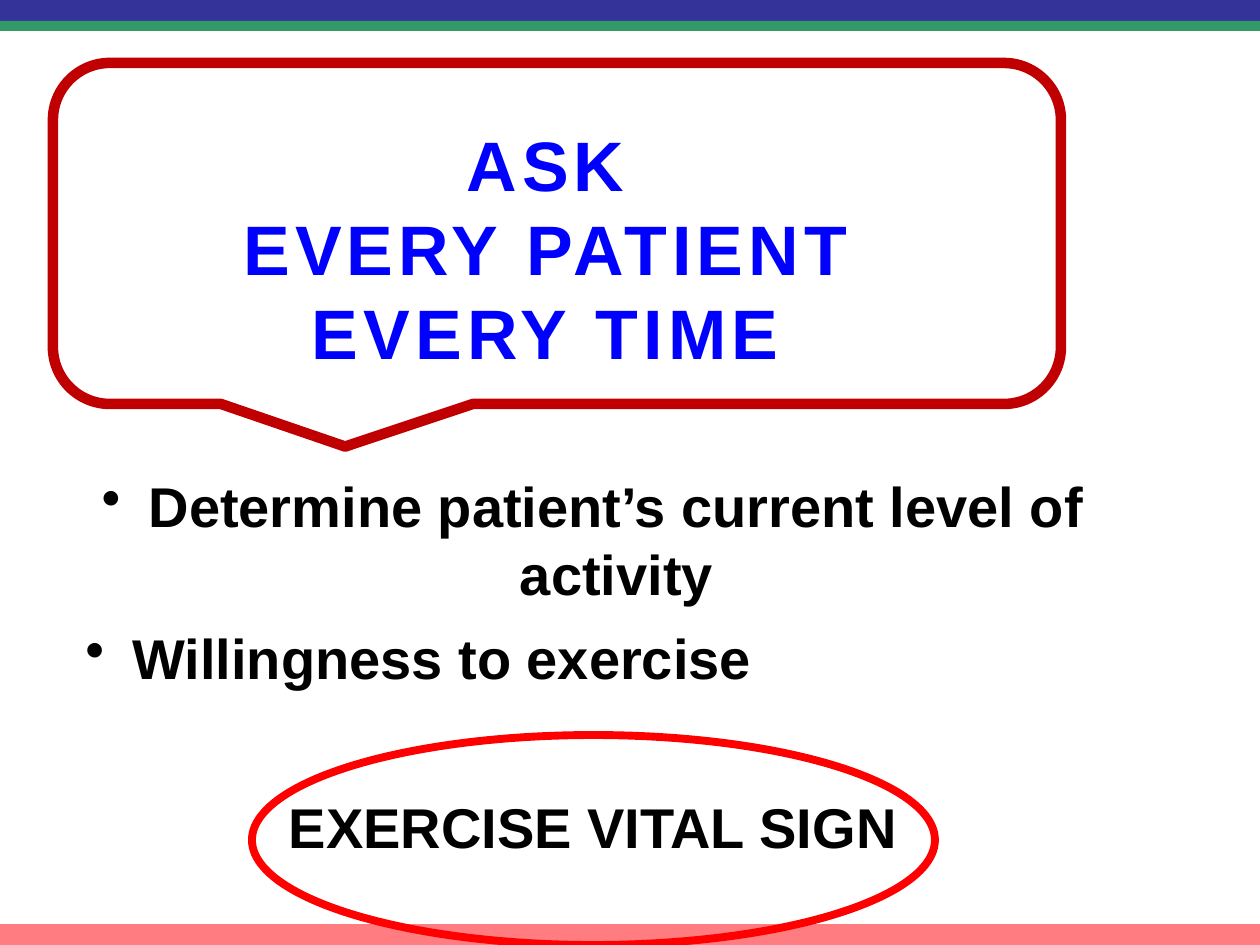
from pptx import Presentation
from pptx.dml.color import RGBColor
from pptx.enum.shapes import MSO_SHAPE as Preset
from pptx.enum.text import MSO_ANCHOR as Anchor, PP_ALIGN as Align
from pptx.util import Emu, Pt
from lxml import etree

PX_PER_INCH = 126
WIDTH, HEIGHT = 1260, 945
FONT = "Arial"
NAMESPACE = "{http://schemas.openxmlformats.org/drawingml/2006/main}"
HANGING = 47
LINE_FACTOR = 1.2


def px(length):
    return Emu(round(length * 914400 / PX_PER_INCH))


def color(hex_string):
    return RGBColor.from_string(hex_string)


class SlideBuilder:
    """Holds the text style and the slide being built."""

    def __init__(self, slide):
        self.slide = slide

    def bar(self, top, height, fill):
        """Add a full-width band that overhangs both slide edges."""
        shape = self.slide.shapes.add_shape(
            Preset.RECTANGLE, px(-21), px(top), px(WIDTH + 42), px(height))
        shape.shadow.inherit = False
        shape.fill.solid()
        shape.fill.fore_color.rgb = color(fill)
        shape.line.fill.background()

    def outline(self, preset, box, line, points, adjustments=()):
        """Add an unfilled preset shape."""
        shape = self.slide.shapes.add_shape(preset, *map(px, box))
        shape.shadow.inherit = False
        shape.fill.background()
        shape.line.color.rgb = color(line)
        shape.line.width = Pt(points)
        for index, value in enumerate(adjustments):
            shape.adjustments[index] = value

    def text_frame(self, box, margin_top=6):
        frame = self.slide.shapes.add_textbox(*map(px, box)).text_frame
        frame.word_wrap = True
        frame.vertical_anchor = Anchor.TOP
        frame.margin_top = px(margin_top)
        return frame

    def paragraph(self, frame, text, size, fill, align=Align.CENTER,
                  before=0, hanging=0, bullet=None, tracking=0):
        first = frame.paragraphs[0]
        paragraph = frame.add_paragraph() if first.runs else first
        paragraph.alignment = align
        paragraph.line_spacing = Pt(size * LINE_FACTOR)
        paragraph.space_before = Pt(before)
        properties = paragraph._p.get_or_add_pPr()
        if hanging:
            properties.set("marL", str(px(hanging)))
            properties.set("indent", str(px(-hanging)))
        if bullet:
            etree.SubElement(properties, NAMESPACE + "buChar", char=bullet)
        run = paragraph.add_run()
        run.text = text
        run.font.name = FONT
        run.font.size = Pt(size)
        run.font.bold = True
        run.font.color.rgb = color(fill)
        if tracking:
            run._r.get_or_add_rPr().set("spc", str(tracking * 100))


def main():
    presentation = Presentation()
    presentation.slide_width, presentation.slide_height = px(WIDTH), px(HEIGHT)
    slide = presentation.slides.add_slide(presentation.slide_layouts[6])
    builder = SlideBuilder(slide)

    for top, height, fill in ((0, 21, "333399"), (21, 10, "339966"),
                              (924, 21, "FF7C80")):
        builder.bar(top, height, fill)

    # The top margin keeps the body text below the callout.
    body = builder.text_frame((73, 210, 1040, 403), margin_top=262)
    for text, align, before, bullet in (
            ("Determine patient’s current level of activity", Align.CENTER, 0, "•"),
            ("Willingness to exercise", Align.LEFT, 10, "•"),
            ("EXERCISE VITAL SIGN", Align.CENTER, 58, None)):
        builder.paragraph(body, text, 32, "000000", align, before, HANGING, bullet)

    builder.outline(Preset.ROUNDED_RECTANGULAR_CALLOUT, (53, 63, 1008, 341),
                    "C00000", 6, (-0.21, 0.625, 0.167))
    title = builder.text_frame((73, 116, 945, 267))
    for text in ("ASK", "EVERY PATIENT", "EVERY TIME"):
        builder.paragraph(title, text, 40, "0000FF", tracking=3)

    builder.outline(Preset.OVAL, (252, 735, 683, 210), "FF0000", 4.5)
    presentation.save("out.pptx")


if __name__ == "__main__":
    main()
